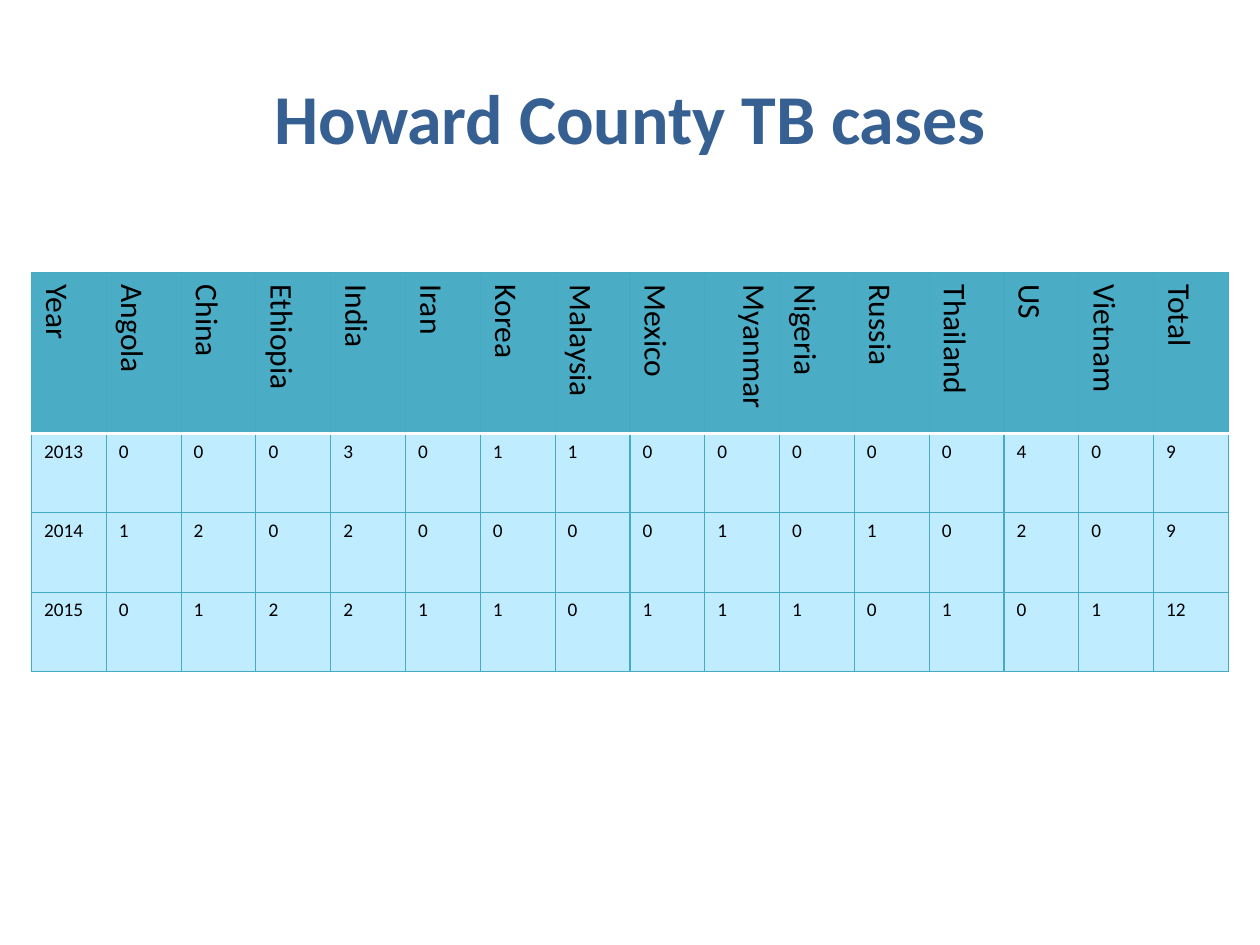
"""Build a slide with a table of Howard County TB cases by year and country."""
from lxml import etree
from pptx import Presentation, util as u
from pptx.dml import color
from pptx.enum import text
from pptx.oxml import ns

COLORS = {"title": "376092", "text": "000000", "header": "4BACC6",
          "body": "BFEDFF", "grid": "46AAC5", "rule": "FFFFFF"}
ROWS = [
    "Year Angola China Ethiopia India Iran Korea Malaysia Mexico Myanmar "
    "Nigeria Russia Thailand US Vietnam Total".split(),
    [2013, 0, 0, 0, 3, 0, 1, 1, 0, 0, 0, 0, 0, 4, 0, 9],
    [2014, 1, 2, 0, 2, 0, 0, 0, 0, 1, 0, 1, 0, 2, 0, 9],
    [2015, 0, 1, 2, 2, 1, 1, 0, 1, 1, 1, 0, 1, 0, 1, 12],
]
HEIGHTS = [1.28, 0.63, 0.63, 0.63]


def write(paragraph, words, hue, **formats):
    span = paragraph.add_run()
    span.text = str(words)
    span.font.color.rgb = color.RGBColor.from_string(COLORS[hue])
    for name, value in {"name": "Calibri", **formats}.items():
        setattr(span.font, name, value)


def add_border(cell, side, hue, width):
    line = etree.Element(ns.qn(f"a:{side}"), w=str(u.Pt(width)))
    fill = etree.SubElement(line, ns.qn("a:solidFill"))
    etree.SubElement(fill, ns.qn("a:srgbClr"), val=COLORS[hue])
    cell._tc.get_or_add_tcPr().append(line)


deck = Presentation()
deck.slide_width, deck.slide_height = u.Inches(10), u.Inches(7.5)
page = deck.slides.add_slide(deck.slide_layouts[5])

title = page.shapes.title
for name, value in {"left": 0.5, "top": 0.3, "width": 9, "height": 1.25}.items():
    setattr(title, name, u.Inches(value))
title.text_frame.vertical_anchor = text.MSO_ANCHOR.MIDDLE
heading = title.text_frame.paragraphs[0]
heading.alignment = text.PP_ALIGN.CENTER
write(heading, "Howard County TB cases", "title", size=u.Pt(40), bold=True)

table = page.shapes.add_table(
    len(ROWS), len(ROWS[0]), u.Inches(0.25), u.Inches(2.16),
    u.Inches(9.5), u.Inches(sum(HEIGHTS))).table
for column in table.columns:
    column.width = u.Inches(9.5 / len(ROWS[0]))

for row, values in enumerate(ROWS):
    table.rows[row].height = u.Inches(HEIGHTS[row])
    is_header = row == 0
    for col, value in enumerate(values):
        cell = table.cell(row, col)
        for side in ("lnL", "lnR", "lnT", "lnB"):
            is_rule = (row, side) in ((0, "lnB"), (1, "lnT"))
            add_border(cell, side, *(("rule", 2) if is_rule else ("grid", 0.75)))
        cell.fill.solid()
        cell.fill.fore_color.rgb = color.RGBColor.from_string(
            COLORS["header" if is_header else "body"])
        if is_header:
            cell._tc.get_or_add_tcPr().set("vert", "vert")
        if value == "Myanmar":
            cell.margin_bottom = u.Inches(0.24)
        write(cell.text_frame.paragraphs[0], value, "text",
              size=u.Pt(18 if is_header else 11), bold=False)

deck.save("out.pptx")
